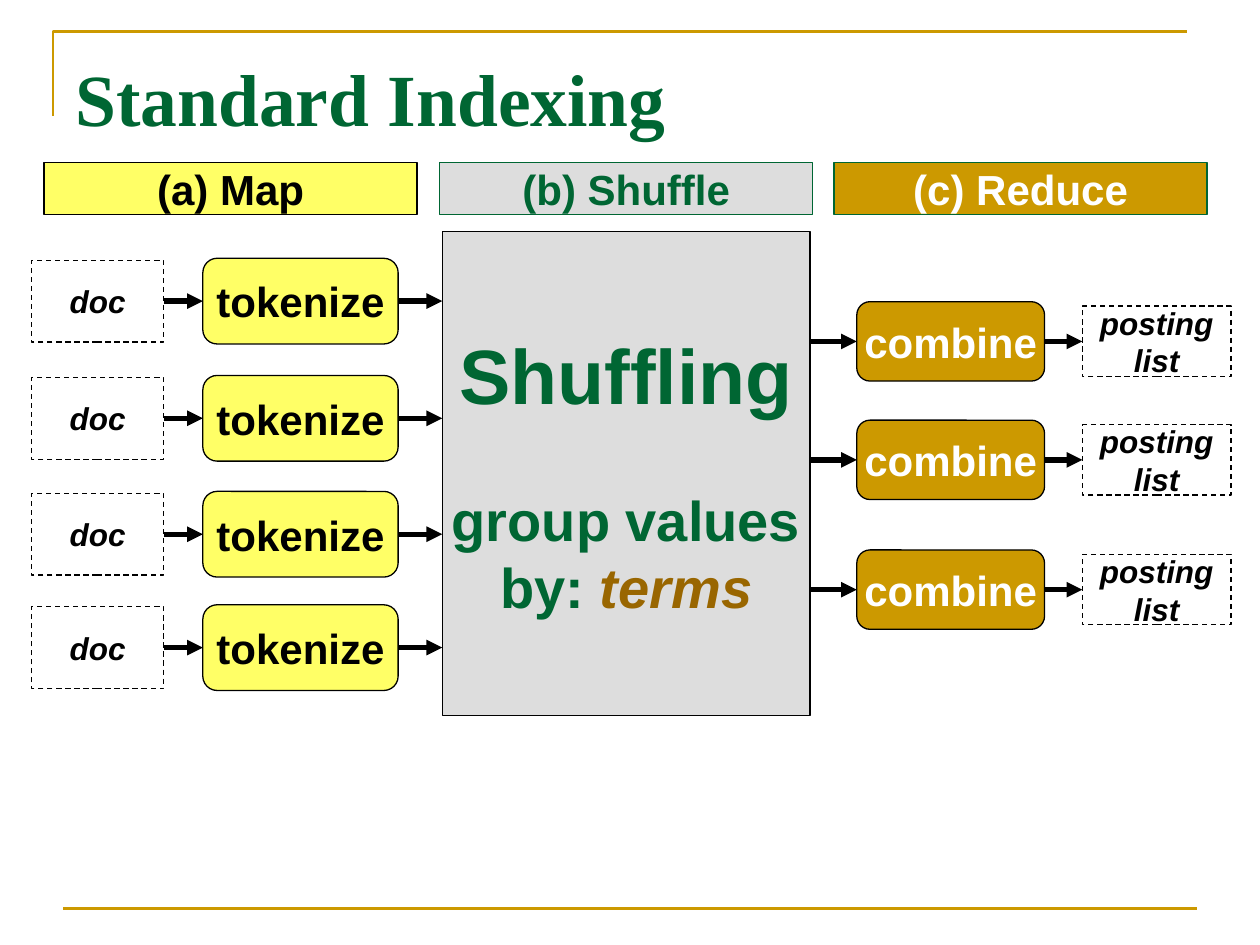
import pptx
import pptx.util
import pptx.dml.color
import pptx.enum.dml
import pptx.enum.shapes
import pptx.enum.text
import pptx.oxml
import pptx.oxml.ns
import lxml.etree

Inches = pptx.util.Inches
Pt = pptx.util.Pt
RGBColor = pptx.dml.color.RGBColor
SHAPE = pptx.enum.shapes.MSO_SHAPE
ANCHOR = pptx.enum.text.MSO_ANCHOR
qn = pptx.oxml.ns.qn

GREEN = RGBColor(0x00, 0x66, 0x33)
GOLD = RGBColor(0xCC, 0x99, 0x00)
BROWN = RGBColor(0x99, 0x66, 0x00)
YELLOW = RGBColor(0xFF, 0xFF, 0x66)
GRAY = RGBColor(0xDD, 0xDD, 0xDD)
BLACK = RGBColor(0x00, 0x00, 0x00)
WHITE = RGBColor(0xFF, 0xFF, 0xFF)

prs = pptx.Presentation()
prs.slide_width = Inches(10)
prs.slide_height = Inches(7.5)
slide = prs.slides.add_slide(prs.slide_layouts[6])


def add_box(geometry, left, top, width, height, fill, line, runs_by_paragraph, inset=0):
    box = slide.shapes.add_shape(geometry, Inches(left), Inches(top), Inches(width), Inches(height))
    box.shadow.inherit = False
    box.fill.solid()
    box.fill.fore_color.rgb = fill
    box.line.color.rgb = line
    box.line.width = Pt(0.75)
    frame = box.text_frame
    frame_format = {
        "word_wrap": True,
        "vertical_anchor": ANCHOR.MIDDLE,
        "margin_left": 0,
        "margin_right": 0,
        "margin_top": Inches(inset),
        "margin_bottom": Inches(inset),
    }
    for key, value in frame_format.items():
        setattr(frame, key, value)
    for index, runs in enumerate(runs_by_paragraph):
        paragraph = frame.add_paragraph() if index else frame.paragraphs[0]
        paragraph.alignment = pptx.enum.text.PP_ALIGN.CENTER
        for text, size, color, italic in runs:
            run = paragraph.add_run()
            run.text = text
            run_format = {"name": "Arial", "size": Pt(size), "bold": True, "italic": italic}
            for key, value in run_format.items():
                setattr(run.font, key, value)
            run.font.color.rgb = color
    return box


def add_line(x1, y1, x2, y2, color, width, arrow=True):
    line = slide.shapes.add_connector(
        pptx.enum.shapes.MSO_CONNECTOR.STRAIGHT, Inches(x1), Inches(y1), Inches(x2), Inches(y2))
    line.line.color.rgb = color
    line.line.width = Pt(width)
    if arrow:
        lxml.etree.SubElement(line.line._get_or_add_ln(), qn("a:tailEnd"), type="triangle")
    lxml.etree.SubElement(line._element.spPr, qn("a:effectLst"))
    return line


corner_builder = slide.shapes.build_freeform(Inches(0.42), Inches(0.92), scale=1.0)
corner_builder.add_line_segments(
    [(Inches(0.42), Inches(0.25)), (Inches(9.42), Inches(0.25))], close=False)
corner = corner_builder.convert_to_shape()
corner.shadow.inherit = False
corner.fill.background()
corner.line.color.rgb = GOLD
corner.line.width = Pt(1.5)
add_line(0.5, 7.21, 9.5, 7.21, GOLD, 1.5, arrow=False)

title = slide.shapes.add_textbox(Inches(0.5), Inches(0.3), Inches(9.5), Inches(1.25))
title.text_frame.word_wrap = True
title.text_frame.margin_top = Inches(0.12)
title.text_frame.text = "Standard Indexing"
title_font = title.text_frame.paragraphs[0].font
for key, value in {"name": "Times New Roman", "size": Pt(42), "bold": True}.items():
    setattr(title_font, key, value)
title_font.color.rgb = GREEN

for center in (2.39, 3.32, 4.24, 5.14):
    tokenize = add_box(SHAPE.ROUNDED_RECTANGLE, 1.61, center - 0.34, 1.55, 0.68, YELLOW, BLACK,
                       [[("tokenize", 24, BLACK, False)]])
    doc = add_box(SHAPE.RECTANGLE, 0.25, center - 0.325, 1.05, 0.65, WHITE, BLACK,
                  [[("doc", 18, BLACK, True)]], inset=0.05)
    doc.line.dash_style = pptx.enum.dml.MSO_LINE.DASH
    doc_arrow = add_line(1.3, center, 1.61, center, BLACK, 3)
    doc_arrow.begin_connect(doc, 3)
    doc_arrow.end_connect(tokenize, 1)
    map_arrow = add_line(3.16, center, 3.51, center, BLACK, 3)
    map_arrow.begin_connect(tokenize, 3)

for center in (2.71, 3.65, 4.68):
    combine = add_box(SHAPE.ROUNDED_RECTANGLE, 6.8, center - 0.315, 1.49, 0.63, GOLD, BLACK,
                      [[("combine", 24, WHITE, False)]])
    posting_list = add_box(SHAPE.RECTANGLE, 8.59, center - 0.28, 1.18, 0.56, WHITE, BLACK,
                           [[("posting list", 18, BLACK, True)]], inset=0.05)
    posting_list.line.dash_style = pptx.enum.dml.MSO_LINE.DASH
    reduce_arrow = add_line(6.04, center, 6.8, center, BLACK, 3)
    reduce_arrow.end_connect(combine, 1)
    list_arrow = add_line(8.29, center, 8.59, center, BLACK, 3)
    list_arrow.begin_connect(combine, 3)
    list_arrow.end_connect(posting_list, 1)

shuffling = add_box(SHAPE.RECTANGLE, 3.51, 1.84, 2.92, 3.84, GRAY, BLACK, [
    [("Shuffling", 44, GREEN, False)],
    [("group values by: ", 32, GREEN, False), ("terms", 32, BROWN, True)],
])
shuffling.text_frame.paragraphs[1].space_before = Pt(37)

stages = [
    ("(a) Map", 0.35, YELLOW, BLACK, BLACK),
    ("(b) Shuffle", 3.49, GRAY, GREEN, GREEN),
    ("(c) Reduce", 6.62, GOLD, GREEN, WHITE),
]
for stage, left, fill, line, color in stages:
    add_box(SHAPE.RECTANGLE, left, 1.29, 2.96, 0.41, fill, line, [[(stage, 24, color, False)]])

prs.save("out.pptx")
